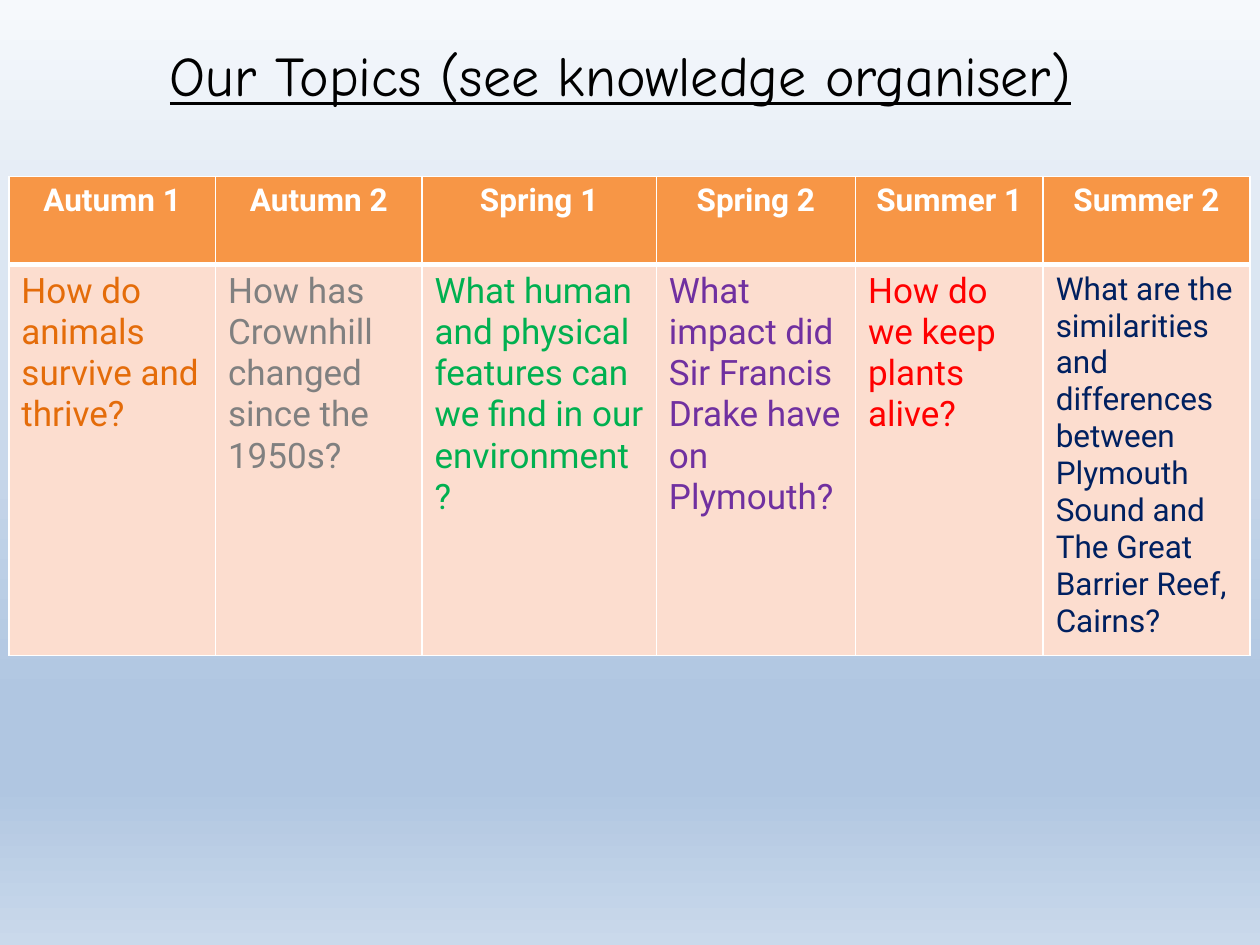
from lxml.etree import SubElement
from pptx import Presentation
from pptx.dml.color import RGBColor
from pptx.enum.text import MSO_ANCHOR, MSO_AUTO_SIZE, PP_ALIGN as Align
from pptx.oxml.ns import qn
from pptx.util import Inches, Pt

BLACK = RGBColor(0x00, 0x00, 0x00)
WHITE = RGBColor(0xFF, 0xFF, 0xFF)
HEADER_FILL = RGBColor(0xF7, 0x96, 0x46)
BODY_FILL = RGBColor(0xFC, 0xDD, 0xCF)
ORANGE = RGBColor(0xE4, 0x6C, 0x0A)
GREY = RGBColor(0x80, 0x80, 0x80)
GREEN = RGBColor(0x00, 0xB0, 0x50)
PURPLE = RGBColor(0x70, 0x30, 0xA0)
RED = RGBColor(0xFF, 0x00, 0x00)
NAVY = RGBColor(0x00, 0x20, 0x60)

# Percentage down the slide, colour
BACKGROUND_STOPS = [
    (0, RGBColor(0xF6, 0xF9, 0xFC)),
    (74, RGBColor(0xB0, 0xC6, 0xE1)),
    (83, RGBColor(0xB0, 0xC6, 0xE1)),
    (100, RGBColor(0xCA, 0xD9, 0xEB)),
]

TITLE_FONT, BODY_FONT = "Comic Neue", "Roboto"
CONTENT_WIDTH = 9.85
ROW_HEIGHTS = [0.7, 3.1]

# Half term, column width, question, colour, text size
TOPICS = [
    ("Autumn 1", 1.64, "How do animals survive and thrive?", ORANGE, 20),
    ("Autumn 2", 1.64, "How has Crownhill changed since the 1950s?", GREY, 20),
    ("Spring 1", 1.86, "What human and physical features can we find in our environment?",
     GREEN, 20),
    ("Spring 2", 1.58, "What impact did Sir Francis Drake have on Plymouth?", PURPLE, 20),
    ("Summer 1", 1.49, "How do we keep plants alive?", RED, 20),
    ("Summer 2", 1.64, "What are the similarities and differences between Plymouth Sound "
     "and The Great Barrier Reef, Cairns?", NAVY, 18),
]


def paint_background(slide):
    fill = slide.background.fill
    fill.gradient()
    fill.gradient_angle = 270
    stop_list = next(slide.element.iter(qn("a:gsLst")))
    stop_list.clear()
    for percent, color in BACKGROUND_STOPS:
        stop = SubElement(stop_list, qn("a:gs"), pos=str(percent * 1000))
        SubElement(stop, qn("a:srgbClr"), val=str(color))


def write_text(text_frame, text, font_name, size, color, align, bold=False, underline=False):
    text_frame.text = text
    paragraph = text_frame.paragraphs[0]
    paragraph.alignment = align
    font = paragraph.runs[0].font
    font.name, font.size = font_name, Pt(size)
    font.bold, font.underline = bold, underline
    font.color.rgb = color


def add_title(slide, text):
    title = slide.shapes.title
    title.left, title.top = Inches(0), Inches(0.27)
    title.width, title.height = Inches(CONTENT_WIDTH), Inches(0.64)
    text_frame = title.text_frame
    write_text(text_frame, text, TITLE_FONT, 32, BLACK, Align.CENTER, underline=True)
    text_frame.vertical_anchor = MSO_ANCHOR.TOP
    text_frame.word_wrap = True
    text_frame.auto_size = MSO_AUTO_SIZE.SHAPE_TO_FIT_TEXT


def set_borders(cell, top, bottom):
    properties = cell._tc.get_or_add_tcPr()
    for side, width in (("L", 1), ("R", 1), ("T", top), ("B", bottom)):
        line = SubElement(properties, qn(f"a:ln{side}"), w=str(Pt(width)))
        solid = SubElement(line, qn("a:solidFill"))
        SubElement(solid, qn("a:srgbClr"), val=str(WHITE))


def format_cell(cell, fill_color, top, bottom):
    set_borders(cell, top, bottom)
    cell.fill.solid()
    cell.fill.fore_color.rgb = fill_color


def add_topic_table(slide):
    frame = slide.shapes.add_table(
        len(ROW_HEIGHTS), len(TOPICS), Inches(0.07), Inches(1.4),
        Inches(CONTENT_WIDTH), Inches(sum(ROW_HEIGHTS)))
    table = frame.table
    for row, height in zip(table.rows, ROW_HEIGHTS):
        row.height = Inches(height)

    for index, (term, width, question, color, size) in enumerate(TOPICS):
        table.columns[index].width = Inches(width)
        header, body = table.cell(0, index), table.cell(1, index)
        # A thick rule divides the header from the questions
        format_cell(header, HEADER_FILL, top=1, bottom=3)
        format_cell(body, BODY_FILL, top=3, bottom=1)
        write_text(header.text_frame, term, BODY_FONT, 18, WHITE, Align.CENTER, bold=True)
        write_text(body.text_frame, question, BODY_FONT, size, color, Align.LEFT)


def main():
    presentation = Presentation()
    presentation.slide_width, presentation.slide_height = Inches(10), Inches(7.5)
    title_only = presentation.slide_layouts[5]
    slide = presentation.slides.add_slide(title_only)
    paint_background(slide)
    add_title(slide, "Our Topics (see knowledge organiser)")
    add_topic_table(slide)
    presentation.save("out.pptx")


if __name__ == "__main__":
    main()
